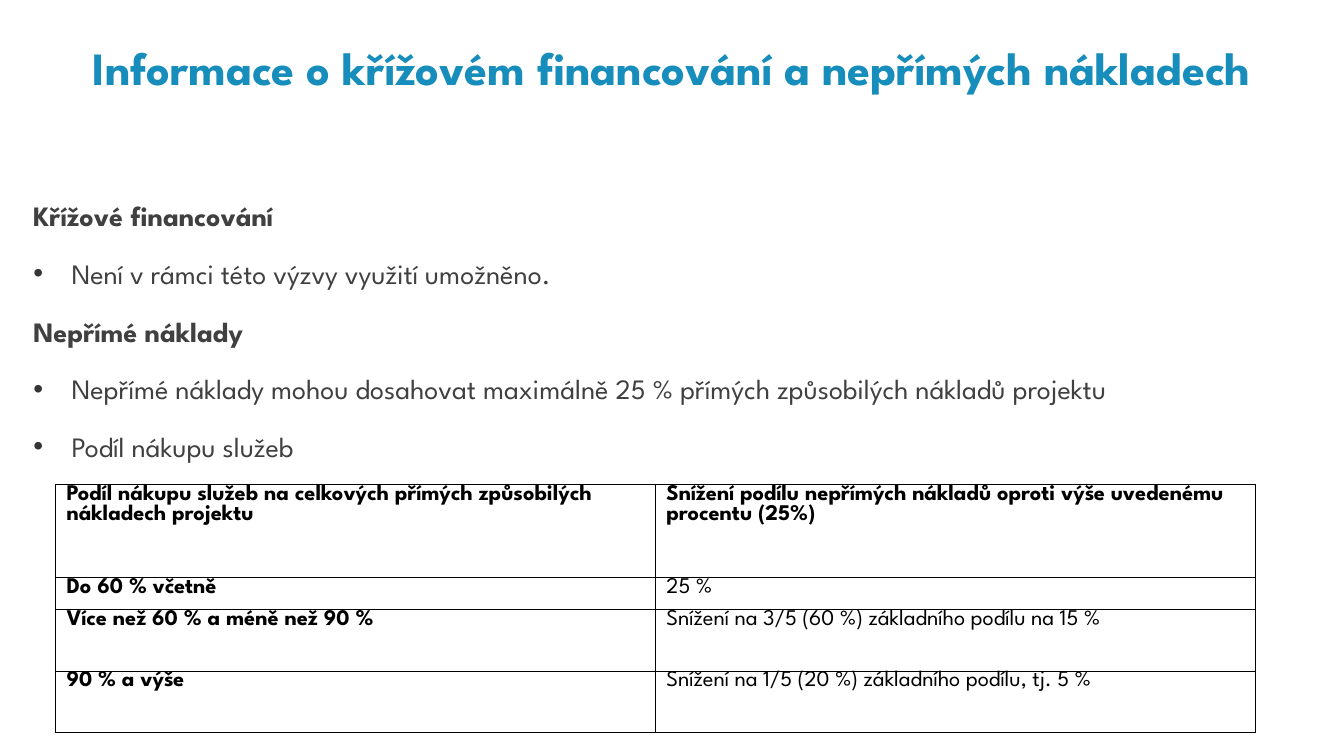
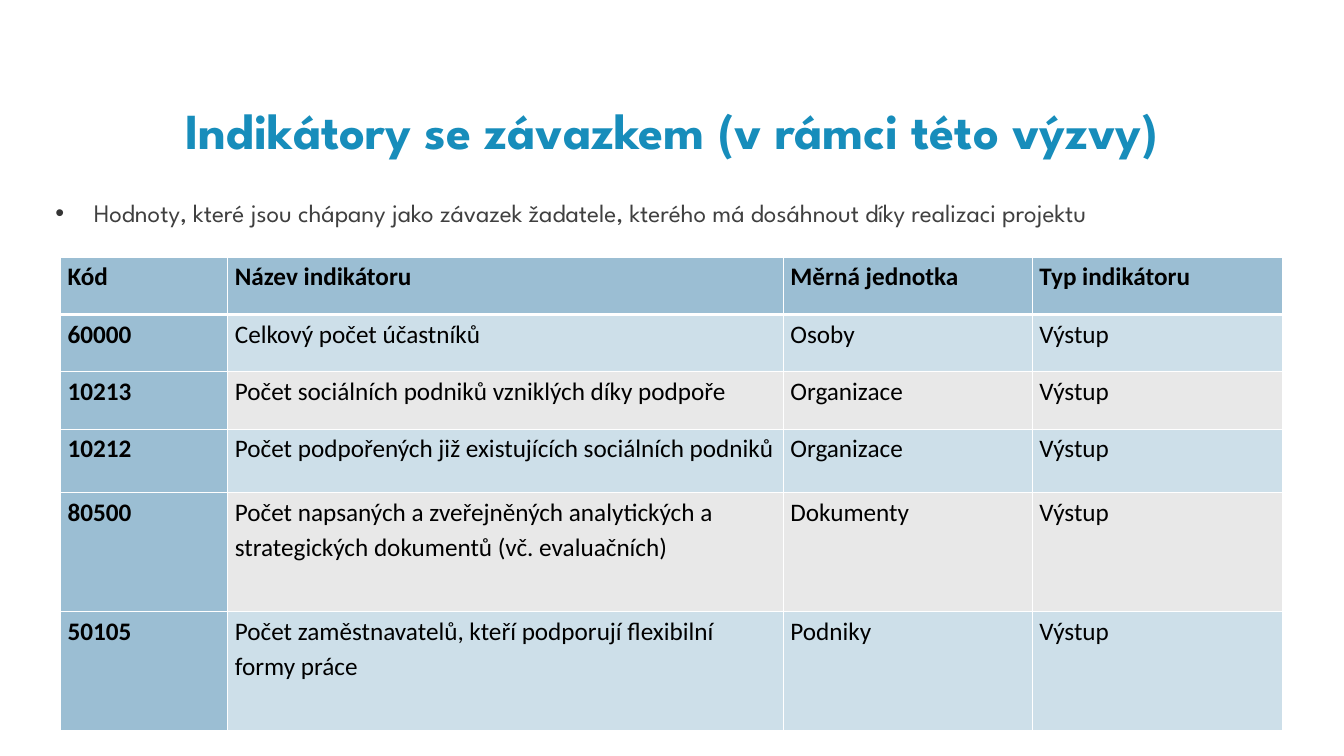
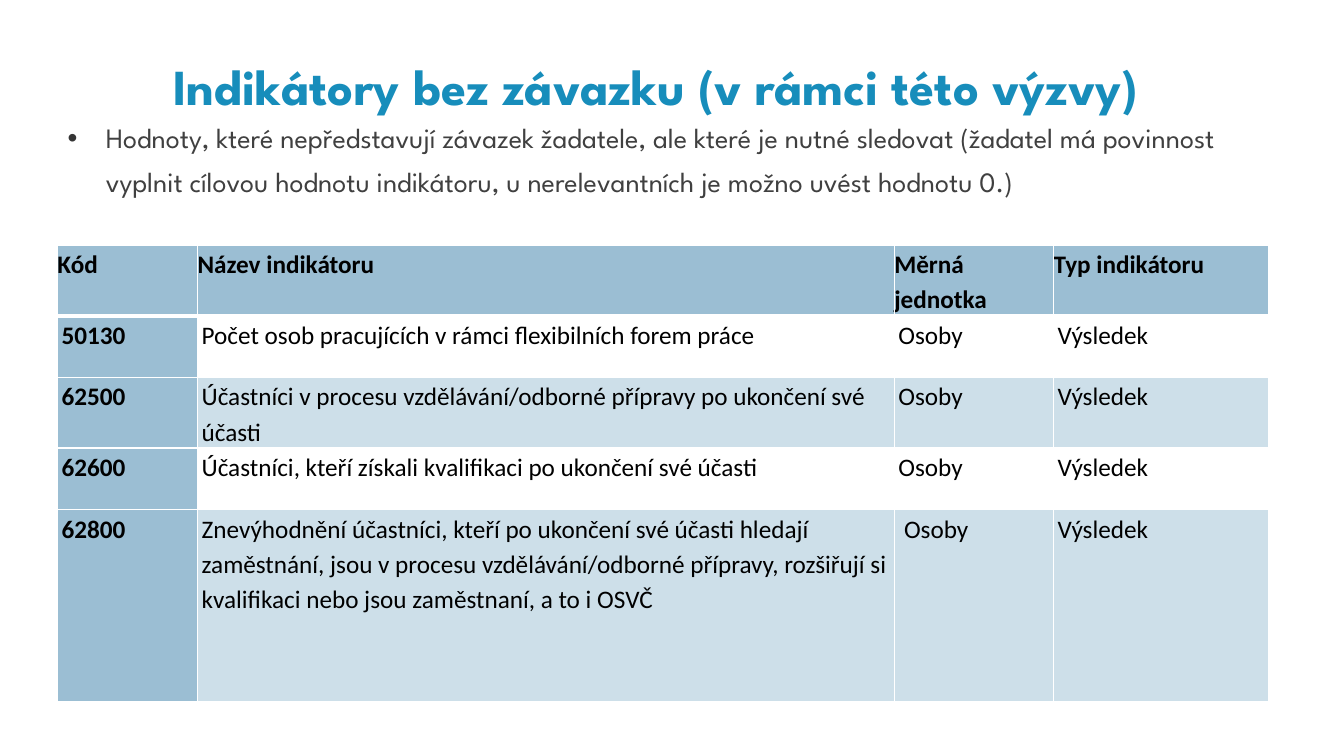
"""Build three slides on indirect costs and indicators of a grant call."""
from lxml import etree
from pptx import Presentation
from pptx import util as u
from pptx.dml.color import RGBColor
from pptx.enum import text
from pptx.oxml.ns import qn

HEADING_FONT, TABLE_FONT = "League Spartan", "Calibri"
BLUE, GREY, BULLET, BLACK, WHITE = "178DBB", "404040", "353535", "000000", "FFFFFF"
HEADER, BAND, PALE = "9BBED3", "CDDFE9", "E8E8E8"
CENTER, LEFT = text.PP_ALIGN.CENTER, text.PP_ALIGN.LEFT
HEADINGS = ["Kód", "Název indikátoru", "Měrná jednotka", "Typ indikátoru"]

SLIDES = [
    {
        "title": ("Informace o křížovém financování a nepřímých nákladech", 33, CENTER, (0, 0.18, 13.33, 1.19)),
        "body": (20, (0.23, 1.82, 12.35, 5), [
            ("Křížové financování", False),
            ("Není v rámci této výzvy využití umožněno.", True),
            ("Nepřímé náklady", False),
            ("Nepřímé náklady mohou dosahovat maximálně 25 % přímých způsobilých nákladů projektu", True),
            ("Podíl nákupu služeb", True),
        ]),
        "table": {
            "at": (0.55, 4.81),
            "columns": [5.95, 5.95],
            "heights": [0.92, 0.32, 0.61, 0.61],
            "rows": [
                ["Podíl nákupu služeb na celkových přímých způsobilých nákladech projektu",
                 "Snížení podílu nepřímých nákladů oproti výše uvedenému procentu (25%)"],
                ["Do 60 % včetně", "25 %"],
                ["Více než 60 % a méně než 90 %", "Snížení na 3/5 (60 %) základního podílu na 15 %"],
                ["90 % a výše", "Snížení na 1/5 (20 %) základního podílu, tj. 5 %"],
            ],
            "font": (HEADING_FONT, 16), "spacing": 1.0, "after": 3,
            "margin": 0.07, "indents": (0.04, 0.04),
            "border": BLACK, "header_line": 1, "header": None, "bands": (None, None),
        },
    },
    {
        "title": ("Indikátory se závazkem (v rámci této výzvy)", 36, CENTER, (0, 0.75, 13.33, 1.07)),
        "body": (18, (0.45, 1.82, 12.13, 2.62), [
            ("Hodnoty, které jsou chápany jako závazek žadatele, kterého má dosáhnout díky realizaci projektu", True),
        ]),
        "table": {
            "at": (0.6, 2.55),
            "columns": [1.66, 5.51, 2.47, 2.48],
            "heights": [0.57, 0.57, 0.57, 0.63, 1.18, 1.18],
            "rows": [
                HEADINGS,
                ["60000", "Celkový počet účastníků", "Osoby", "Výstup"],
                ["10213", "Počet sociálních podniků vzniklých díky podpoře", "Organizace", "Výstup"],
                ["10212", "Počet podpořených již existujících sociálních podniků", "Organizace", "Výstup"],
                ["80500", "Počet napsaných a zveřejněných analytických a strategických dokumentů (vč. evaluačních)",
                 "Dokumenty", "Výstup"],
                ["50105", "Počet zaměstnavatelů, kteří podporují flexibilní formy práce", "Podniky", "Výstup"],
            ],
            "font": (TABLE_FONT, 18), "spacing": 1.15, "after": 6,
            "margin": 0.07, "indents": (0, 0),
            "border": WHITE, "header_line": 3, "header": HEADER, "bands": (BAND, PALE),
        },
    },
    {
        "title": ("Indikátory bez závazku (v rámci této výzvy)", 36, LEFT, (1.62, 0.32, 10.96, 0.87)),
        "body": (20, (0.57, 1.05, 12.01, 1.2), [
            ("Hodnoty, které nepředstavují závazek žadatele, ale které je nutné sledovat (žadatel má povinnost "
             "vyplnit cílovou hodnotu indikátoru, u nerelevantních je možno uvést hodnotu 0.)", True),
        ]),
        "table": {
            "at": (0.57, 2.43),
            "columns": [1.39, 6.91, 1.58, 2.13],
            "heights": [0.61, 0.61, 0.61, 0.61, 1.91],
            "rows": [
                HEADINGS,
                ["50130", "Počet osob pracujících v rámci flexibilních forem práce", "Osoby", "Výsledek"],
                ["62500", "Účastníci v procesu vzdělávání/odborné přípravy po ukončení své účasti",
                 "Osoby", "Výsledek"],
                ["62600", "Účastníci, kteří získali kvalifikaci po ukončení své účasti", "Osoby", "Výsledek"],
                ["62800", "Znevýhodnění účastníci, kteří po ukončení své účasti hledají zaměstnání, jsou v procesu "
                 "vzdělávání/odborné přípravy, rozšiřují si kvalifikaci nebo jsou zaměstnaní, a to i OSVČ",
                 " Osoby", "Výsledek"],
            ],
            "font": (TABLE_FONT, 18), "spacing": 1.15, "after": 3,
            "margin": 0, "indents": (0, 0.04),
            "border": WHITE, "header_line": 3, "header": HEADER, "bands": (WHITE, BAND),
        },
    },
]


def color(value):
    return RGBColor.from_string(value)


def assign(target, **values):
    for name, value in values.items():
        setattr(target, name, value)


def add_child(parent, tag, **attributes):
    return etree.SubElement(parent, qn(tag), attributes)


def style_font(paragraph, name, size, fill, bold):
    assign(paragraph.font, name=name, size=u.Pt(size), bold=bold)
    paragraph.font.color.rgb = color(fill)


def set_indent(paragraph, left, first=0):
    properties = paragraph._p.get_or_add_pPr()
    properties.set("marL", str(u.Inches(left)))
    properties.set("indent", str(u.Inches(first)))
    return properties


def place(shape, box):
    assign(shape, **dict(zip(("left", "top", "width", "height"), map(u.Inches, box))))
    assign(shape.text_frame, word_wrap=True, auto_size=text.MSO_AUTO_SIZE.NONE,
           vertical_anchor=text.MSO_ANCHOR.TOP)


def fill_title(shape, wording, size, alignment, box):
    place(shape, box)
    shape.text_frame.text = wording
    paragraph = shape.text_frame.paragraphs[0]
    assign(paragraph, alignment=alignment, line_spacing=1.3)
    style_font(paragraph, HEADING_FONT, size, BLUE, True)


def fill_body(shape, size, box, lines):
    place(shape, box)
    frame = shape.text_frame
    frame.text = "\n".join(wording for wording, _ in lines)
    for index, (paragraph, (_, bulleted)) in enumerate(zip(frame.paragraphs, lines)):
        if bulleted:
            properties = set_indent(paragraph, 0.38, -0.38)
            add_child(add_child(properties, "a:buClr"), "a:srgbClr", val=BULLET)
            add_child(properties, "a:buFont", typeface="Arial")
            add_child(properties, "a:buChar", char="•")
        else:
            add_child(set_indent(paragraph, 0), "a:buNone")
        assign(paragraph, line_spacing=1.3, space_before=u.Pt(10 if index else 0))
        style_font(paragraph, HEADING_FONT, size, GREY, not bulleted)


def set_borders(cell, line_color, widths):
    properties = cell._tc.get_or_add_tcPr()
    for side, width in zip("LRTB", widths):
        line = add_child(properties, f"a:ln{side}", w=str(u.Pt(width)))
        add_child(add_child(line, "a:solidFill"), "a:srgbClr", val=line_color)


def format_cell(cell, wording, row, column, look):
    is_header = row == 0
    header_line = look["header_line"]
    set_borders(cell, look["border"],
                (1, 1, header_line if row == 1 else 1, header_line if is_header else 1))
    background = look["header"] if is_header or column == 0 else look["bands"][(row - 1) % 2]
    if background:
        cell.fill.solid()
        cell.fill.fore_color.rgb = color(background)
    else:
        cell.fill.background()
    margin = u.Inches(look["margin"])
    assign(cell, text=wording, margin_left=margin, margin_right=margin, margin_top=0, margin_bottom=0)
    paragraph = cell.text_frame.paragraphs[0]
    set_indent(paragraph, look["indents"][0 if is_header else 1])
    assign(paragraph, line_spacing=look["spacing"], space_after=u.Pt(look["after"]))
    style_font(paragraph, *look["font"], BLACK, is_header or column == 0)


def add_table(slide, look):
    rows, columns, heights = look["rows"], look["columns"], look["heights"]
    box = (*look["at"], sum(columns), sum(heights))
    table = slide.shapes.add_table(len(rows), len(columns), *map(u.Inches, box)).table
    assign(table, first_row=False, horz_banding=False)
    for column, width in zip(table.columns, columns):
        column.width = u.Inches(width)
    for row, height in zip(table.rows, heights):
        row.height = u.Inches(height)
    for row, wordings in enumerate(rows):
        for column, wording in enumerate(wordings):
            format_cell(table.cell(row, column), wording, row, column, look)


def main():
    presentation = Presentation()
    assign(presentation, slide_width=u.Inches(13.33), slide_height=u.Inches(7.5))
    for content in SLIDES:
        slide = presentation.slides.add_slide(presentation.slide_layouts[1])
        fill_title(slide.shapes.title, *content["title"])
        fill_body(slide.placeholders[1], *content["body"])
        add_table(slide, content["table"])
    presentation.save("out.pptx")


if __name__ == "__main__":
    main()
